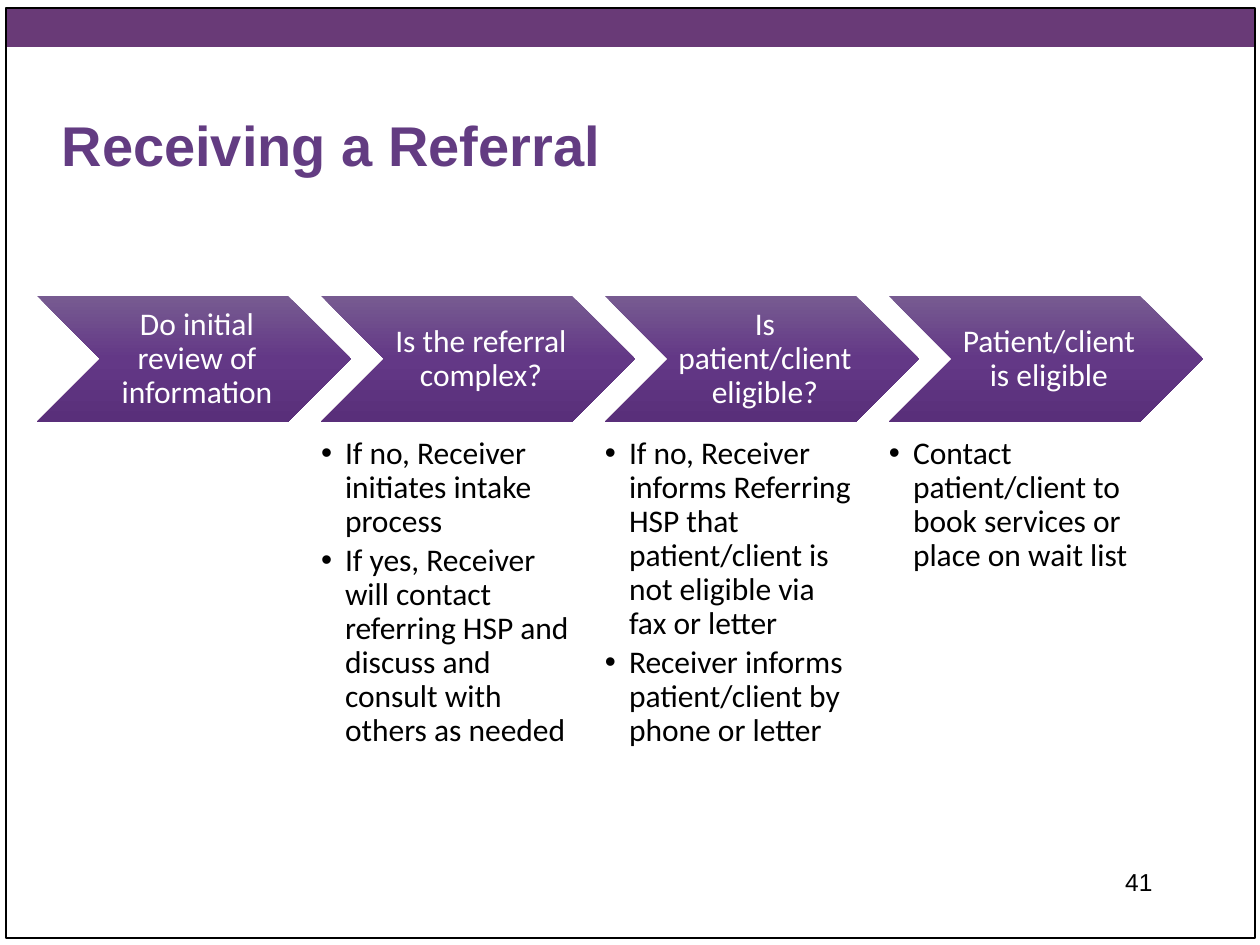
"""Build the "Receiving a Referral" process slide."""
from copy import deepcopy

from lxml.etree import SubElement
from pptx import Presentation
from pptx.dml.color import RGBColor
from pptx.enum.shapes import MSO_SHAPE
from pptx.enum.text import MSO_ANCHOR, MSO_AUTO_SIZE, PP_ALIGN
from pptx.oxml.ns import qn
from pptx.util import Pt

EMU_PER_PX = 914400 / 126
COLORS = {
    "banner": "693A77",
    "title": "633C82",
    "text": "000000",
    "stage_text": "FFFFFF",
}
STAGE_GRADIENT = {0: "775B91", 0.5: "633886", 1: "592F7A"}
STAGES = [
    ("Do initial review of information", []),
    ("Is the referral complex?", [
        "If no, Receiver initiates intake process",
        "If yes, Receiver will contact referring HSP and discuss and consult with others as needed",
    ]),
    ("Is patient/client eligible?", [
        "If no, Receiver informs Referring HSP that patient/client is not eligible via fax or letter",
        "Receiver informs patient/client by phone or letter",
    ]),
    ("Patient/client is eligible", [
        "Contact patient/client to book services or place on wait list",
    ]),
]
STAGE_LEFT, STAGE_TOP, STAGE_STEP = 37, 296, 284
STAGE_WIDTH, STAGE_HEIGHT = 314, 126
POINTS_TOP, POINTS_WIDTH, POINTS_HEIGHT = 437, 251, 318


def px(length):
    return int(length * EMU_PER_PX)


def rgb(name):
    return RGBColor.from_string(COLORS[name])


def apply(target, values):
    for name, value in values.items():
        setattr(target, name, value)


class SlideBuilder:
    """Hold the text styles and the current slide, and add its elements."""

    def __init__(self, slide):
        self.slide = slide
        self.fonts = {
            "title": {"name": "Arial", "size": Pt(32), "bold": True},
            "stage_text": {"name": "Calibri", "size": Pt(18), "bold": False},
            "text": {"name": "Calibri", "size": Pt(18), "bold": False},
            "number": {"name": "Arial", "size": Pt(14), "bold": False},
        }

    def place(self, shape, box):
        apply(shape, dict(zip(("left", "top", "width", "height"), map(px, box))))

    def set_text(self, shape, lines, font, color, anchor, insets=None, **paragraph_format):
        frame = shape.text_frame
        frame.text = "\n".join(lines)
        apply(frame, {"word_wrap": True, "auto_size": MSO_AUTO_SIZE.NONE,
                      "vertical_anchor": anchor})
        if insets:
            sides = ("margin_left", "margin_top", "margin_right", "margin_bottom")
            apply(frame, dict(zip(sides, map(px, insets))))
        for paragraph in frame.paragraphs:
            apply(paragraph, paragraph_format)
            for run in paragraph.runs:
                apply(run.font, self.fonts[font])
                run.font.color.rgb = rgb(color)

    def title(self, text, box):
        self.place(self.slide.shapes.title, box)
        self.set_text(self.slide.shapes.title, [text], "title", "title",
                      MSO_ANCHOR.BOTTOM, alignment=PP_ALIGN.LEFT)

    def shape(self, kind, box):
        shape = self.slide.shapes.add_shape(kind, *map(px, box))
        shape.shadow.inherit = False
        shape.line.fill.background()
        return shape

    def banner(self, box):
        banner = self.shape(MSO_SHAPE.RECTANGLE, box)
        banner.fill.solid()
        banner.fill.fore_color.rgb = rgb("banner")

    def border(self, box):
        border = self.shape(MSO_SHAPE.RECTANGLE, box)
        border.fill.background()
        border.line.color.rgb = rgb("text")
        border.line.width = Pt(0.75)

    def stage(self, text, box):
        stage = self.shape(MSO_SHAPE.CHEVRON, box)
        stage.fill.gradient()
        stage.fill.gradient_angle = 270
        stops = stage._element.spPr.find(qn("a:gradFill")).find(qn("a:gsLst"))
        stops.append(deepcopy(stops[0]))
        for stop, (position, color) in zip(stage.fill.gradient_stops, STAGE_GRADIENT.items()):
            stop.position = position
            stop.color.rgb = RGBColor.from_string(color)
        self.set_text(stage, [text], "stage_text", "stage_text", MSO_ANCHOR.MIDDLE,
                      (10, 4, 4, 4), alignment=PP_ALIGN.CENTER, line_spacing=0.9)

    def points(self, placeholder, lines, box):
        if not lines:
            placeholder._element.getparent().remove(placeholder._element)
            return
        self.place(placeholder, box)
        self.set_text(placeholder, lines, "text", "text", MSO_ANCHOR.TOP, (0, 0, 0, 0),
                      alignment=PP_ALIGN.LEFT, line_spacing=0.9,
                      space_before=Pt(0), space_after=Pt(3))
        for paragraph in placeholder.text_frame.paragraphs:
            properties = paragraph._p.get_or_add_pPr()
            properties.set("marL", str(px(24)))
            properties.set("indent", str(-px(24)))
            SubElement(properties, qn("a:buFont"), typeface="Arial")
            SubElement(properties, qn("a:buChar"), char="•")

    def page_number(self, text, box):
        number = self.slide.shapes.add_textbox(*map(px, box))
        self.set_text(number, [text], "number", "text", MSO_ANCHOR.TOP,
                      alignment=PP_ALIGN.RIGHT)


def main():
    deck = Presentation()
    apply(deck, {"slide_width": px(1260), "slide_height": px(945)})
    slide = deck.slides.add_slide(deck.slide_layouts.get_by_name("Comparison"))
    builder = SlideBuilder(slide)
    bodies = [body for body in slide.placeholders if 1 <= body.placeholder_format.idx <= 4]

    builder.banner((6, 8, 1249, 39))
    builder.border((6, 8, 1249, 930))
    builder.title("Receiving a Referral", (49, 58, 1071, 126))
    for index, (body, (question, actions)) in enumerate(zip(bodies, STAGES)):
        left = STAGE_LEFT + index * STAGE_STEP
        builder.stage(question, (left, STAGE_TOP, STAGE_WIDTH, STAGE_HEIGHT))
        builder.points(body, actions, (left, POINTS_TOP, POINTS_WIDTH, POINTS_HEIGHT))
    builder.page_number("41", (903, 861, 262, 63))
    deck.save("out.pptx")


if __name__ == "__main__":
    main()
